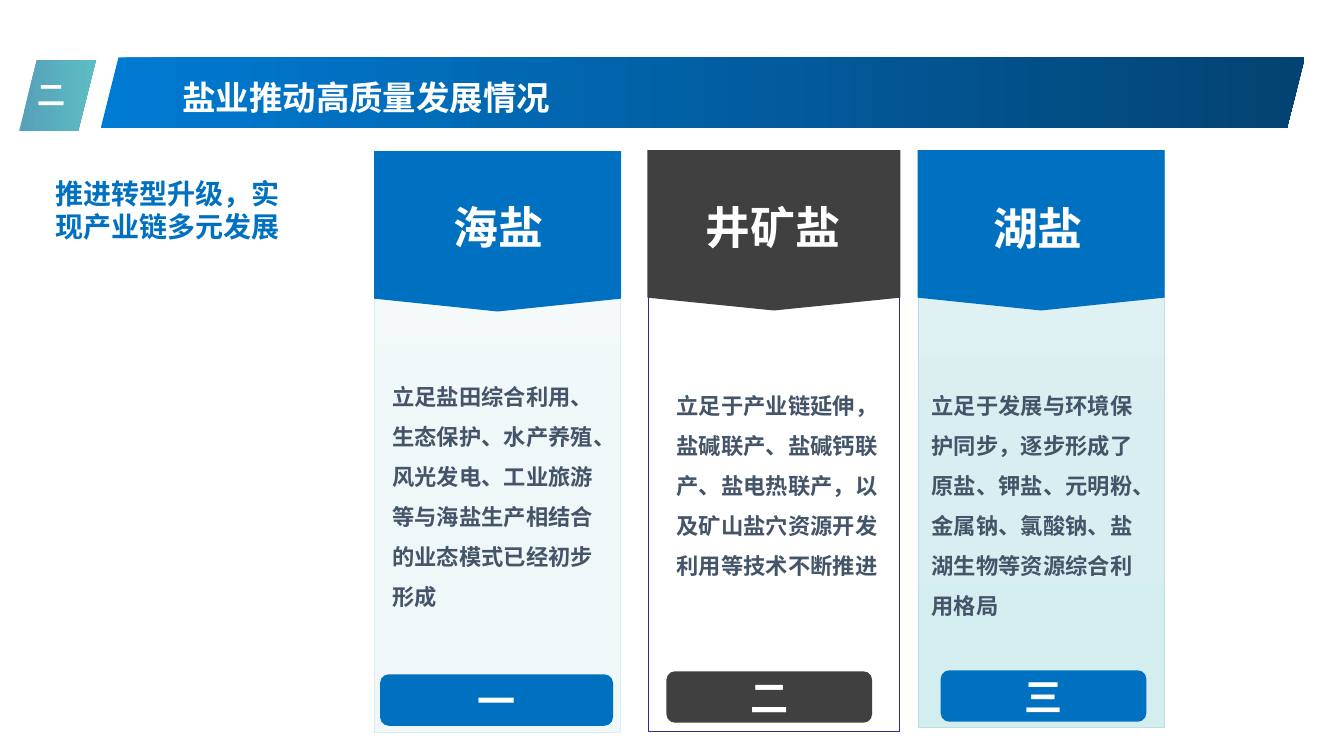
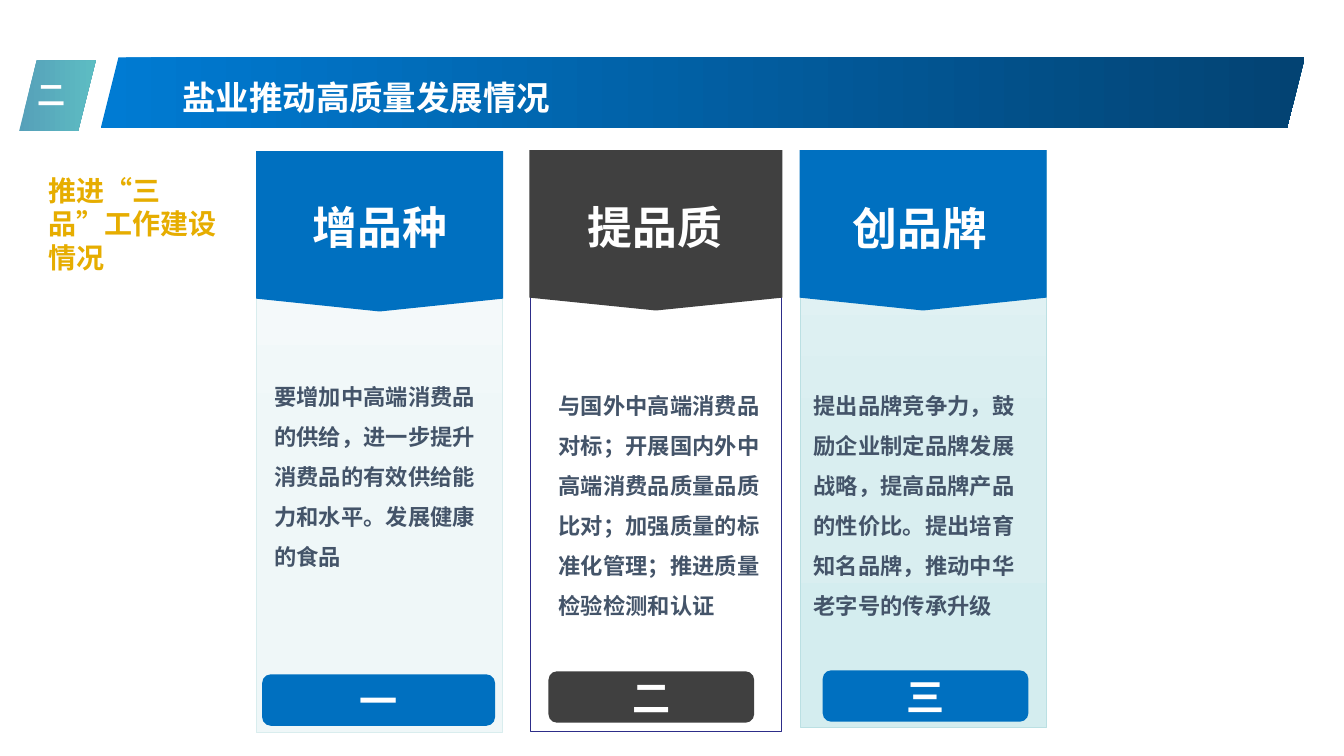
from copy import deepcopy
from dataclasses import dataclass

from pptx import Presentation
from pptx.dml.color import RGBColor as RGB
from pptx.enum.shapes import MSO_SHAPE as Geo
from pptx.enum.text import MSO_ANCHOR as Anchor
from pptx.enum.text import MSO_AUTO_SIZE as Fit
from pptx.enum.text import PP_ALIGN as Align
from pptx.util import Inches, Pt

HEX = {
    "blue": "0070C0", "dark": "404040", "gold": "E6AD00",
    "white": "FFFFFF", "body": "445469", "navy": "2D2D89",
    "pale": "D9EDEE", "aqua": "BBE0E3",
}
BAND = ["007BD3", "034373"]
CHIP = ["56A0B9", "5DBDC3"]
MIST = ["FBFDFD", "EFF7F8", "EDF7F7"]
TEAL = ["E6F4F5", "D9EEF0", "D4EDEF"]
CJK, LATIN = "Noto Sans CJK SC", "Arial"


@dataclass
class Col:
    """Geometry and colours of one column; left values are for slide 1."""
    num: str
    panel: tuple
    tint: list
    edge: str
    tone: str
    head: tuple    # left, top, width of the arrow head
    tag: tuple     # left, top, width of the number tag
    title: tuple   # left, top, width of the heading
    text: tuple    # left, top, width of the body text


COLS = [
    Col("一", (3.71, 1.5, 2.44, 5.77), MIST, "pale", "blue",
        (3.71, 1.5, 2.45), (3.77, 6.69, 2.31),
        (3.75, 1.93, 2.38), (3.89, 3.67, 2.09)),
    Col("二", (6.43, 1.5, 2.49, 5.76), [], "navy", "dark",
        (6.42, 1.49, 2.51), (6.61, 6.66, 2.04),
        (6.53, 1.93, 2.27), (6.71, 3.76, 2.07)),
    Col("三", (9.11, 1.49, 2.44, 5.73), TEAL, "aqua", "blue",
        (9.1, 1.49, 2.45), (9.33, 6.65, 2.04),
        (9.17, 1.94, 2.25), (9.24, 3.76, 2.2)),
]

SLIDES = [
    dict(note="推进转型升级，实现产业链多元发展", tone="blue",
         box=(0.45, 1.7, 2.64, 0.77), shift=0, cells=[
             ("海盐", "立足盐田综合利用、生态保护、水产养殖、风光发电、"
                    "工业旅游等与海盐生产相结合的业态模式已经初步形成"),
             ("井矿盐", "立足于产业链延伸，盐碱联产、盐碱钙联产、盐电热联产，"
                     "以及矿山盐穴资源开发利用等技术不断推进"),
             ("湖盐", "立足于发展与环境保护同步，逐步形成了原盐、钾盐、元明粉、"
                    "金属钠、氯酸钠、盐湖生物等资源综合利用格局"),
         ]),
    dict(note="推进“三品”工作建设情况", tone="gold",
         box=(0.38, 1.67, 1.87, 0.77), shift=-1.17, cells=[
             ("增品种", "要增加中高端消费品的供给，进一步提升消费品的有效供给能力和水平。"
                     "发展健康的食品"),
             ("提品质", "与国外中高端消费品对标；开展国内外中高端消费品质量品质比对；"
                     "加强质量的标准化管理；推进质量检验检测和认证"),
             ("创品牌", "提出品牌竞争力，鼓励企业制定品牌发展战略，提高品牌产品的性价比。"
                     "提出培育知名品牌，推动中华老字号的传承升级"),
         ]),
]


def color(name):
    return RGB.from_string(HEX[name])


def blend(fill, tints, angle):
    """Gradient with evenly spaced stops."""
    fill.gradient()
    fill.gradient_angle = angle
    last = fill.gradient_stops[1]._gs
    for _ in tints[2:]:
        last.addnext(deepcopy(last))
    for i, (stop, tint) in enumerate(zip(fill.gradient_stops, tints)):
        stop.position = i / (len(tints) - 1)
        stop.color.rgb = RGB.from_string(tint)


def shape(slide, geo, box, tone=None, tints=None, angle=0, edge=None):
    item = slide.shapes.add_shape(geo, *map(Inches, box))
    item.shadow.inherit = False
    if tints:
        blend(item.fill, tints, angle)
    elif tone:
        item.fill.solid()
        item.fill.fore_color.rgb = color(tone)
    else:
        item.fill.background()
    if edge:
        item.line.color.rgb = color(edge)
        item.line.width = Pt(0.5)
    else:
        item.line.fill.background()
    return item


def write(item, text, size, tone="white", face=CJK, align=Align.LEFT):
    para = item.text_frame.paragraphs[0]
    para.text = text
    para.alignment = align
    font = para.font
    font.name, font.size, font.bold = face, Pt(size), True
    font.color.rgb = color(tone)
    return para


def label(slide, box, text, size, inset=True, **style):
    item = slide.shapes.add_textbox(*map(Inches, box))
    frame = item.text_frame
    frame.word_wrap = True
    frame.auto_size = Fit.SHAPE_TO_FIT_TEXT
    if not inset:
        frame.margin_left = frame.margin_right = 0
        frame.margin_top = frame.margin_bottom = 0
    return write(item, text, size, **style)


def column(slide, col, shift, title, text):
    def place(box, high):
        left, top, wide = box[:3]
        return left + shift, top, wide, high

    # Panel
    shape(slide, Geo.RECTANGLE, place(col.panel, col.panel[3]),
          tints=col.tint, angle=270, edge=col.edge)

    # Arrow head, turned to point down
    left, top, wide, high = place(col.head, 1.59)
    skew = (wide - high) / 2
    head = shape(slide, Geo.PENTAGON, (left + skew, top - skew, high, wide),
                 col.tone)
    head.rotation = 90
    head.adjustments[0] = 0.08

    # Number tag
    tag = shape(slide, Geo.ROUNDED_RECTANGLE, place(col.tag, 0.51), col.tone)
    tag.text_frame.vertical_anchor = Anchor.MIDDLE
    write(tag, col.num, 27.2, align=Align.CENTER)

    # Heading and body
    label(slide, place(col.title, 0.64), title, 32, face=LATIN,
          align=Align.CENTER)
    para = label(slide, place(col.text, 2.42), text, 15.9, inset=False,
                 tone="body", face=LATIN)
    para.line_spacing = 1.5
    para.space_before = Pt(3.2)


def banner(slide):
    shape(slide, Geo.PARALLELOGRAM, (1, 0.57, 11.94, 0.7), tints=BAND)
    shape(slide, Geo.PARALLELOGRAM, (0.19, 0.6, 0.76, 0.7), tints=CHIP)
    label(slide, (0.27, 0.72, 0.6, 0.44), "二", 20)
    para = label(slide, (1.71, 0.52, 6.07, 0.71), "盐业推动高质量发展情况", 23.9)
    para.line_spacing = 1.5


def main():
    deck = Presentation()
    deck.slide_width, deck.slide_height = Inches(13.33), Inches(7.5)
    for page in SLIDES:
        slide = deck.slides.add_slide(deck.slide_layouts[6])
        for col, (title, text) in zip(COLS, page["cells"]):
            column(slide, col, page["shift"], title, text)
        banner(slide)
        label(slide, page["box"], page["note"], 20, tone=page["tone"])
    deck.save("out.pptx")


if __name__ == "__main__":
    main()
